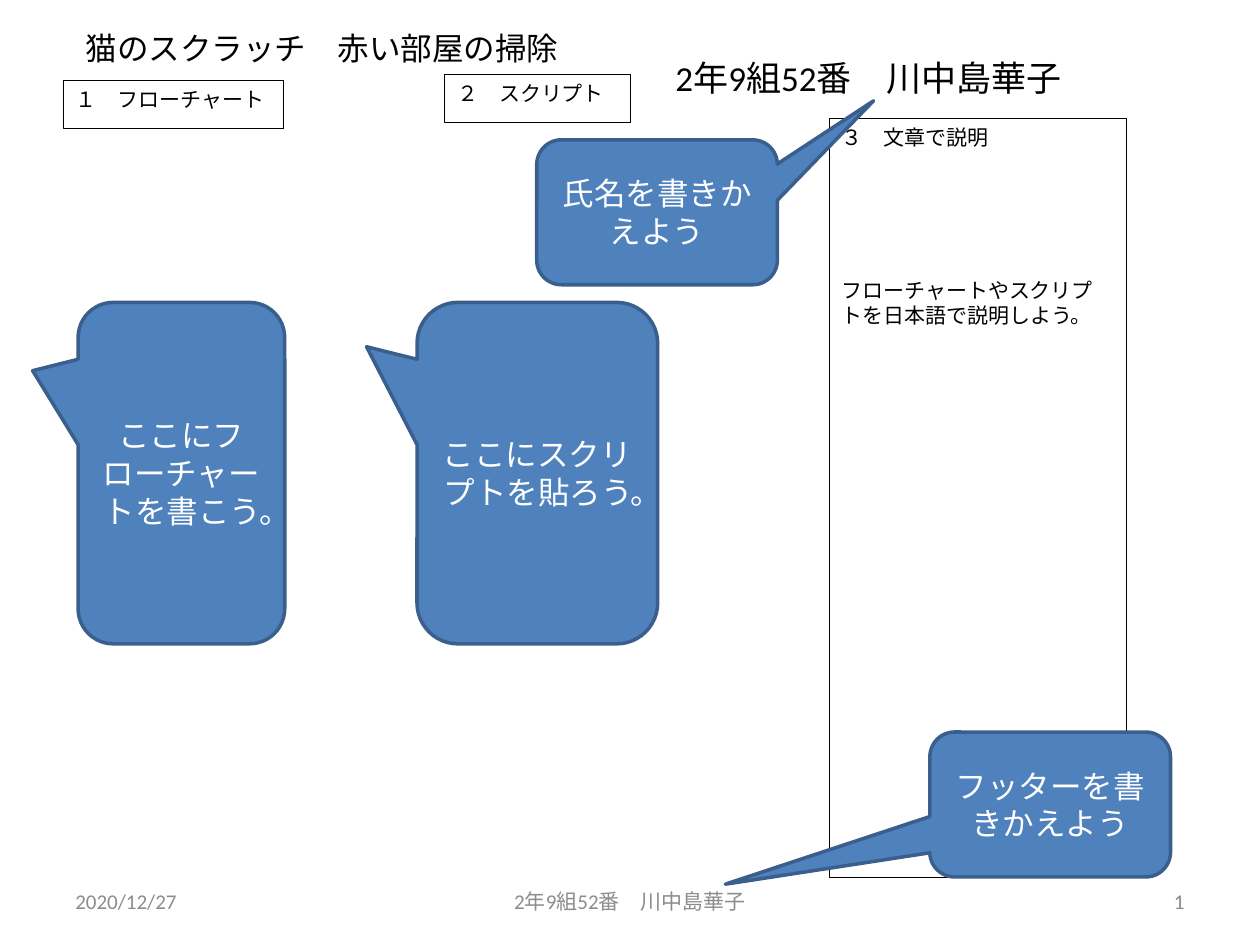
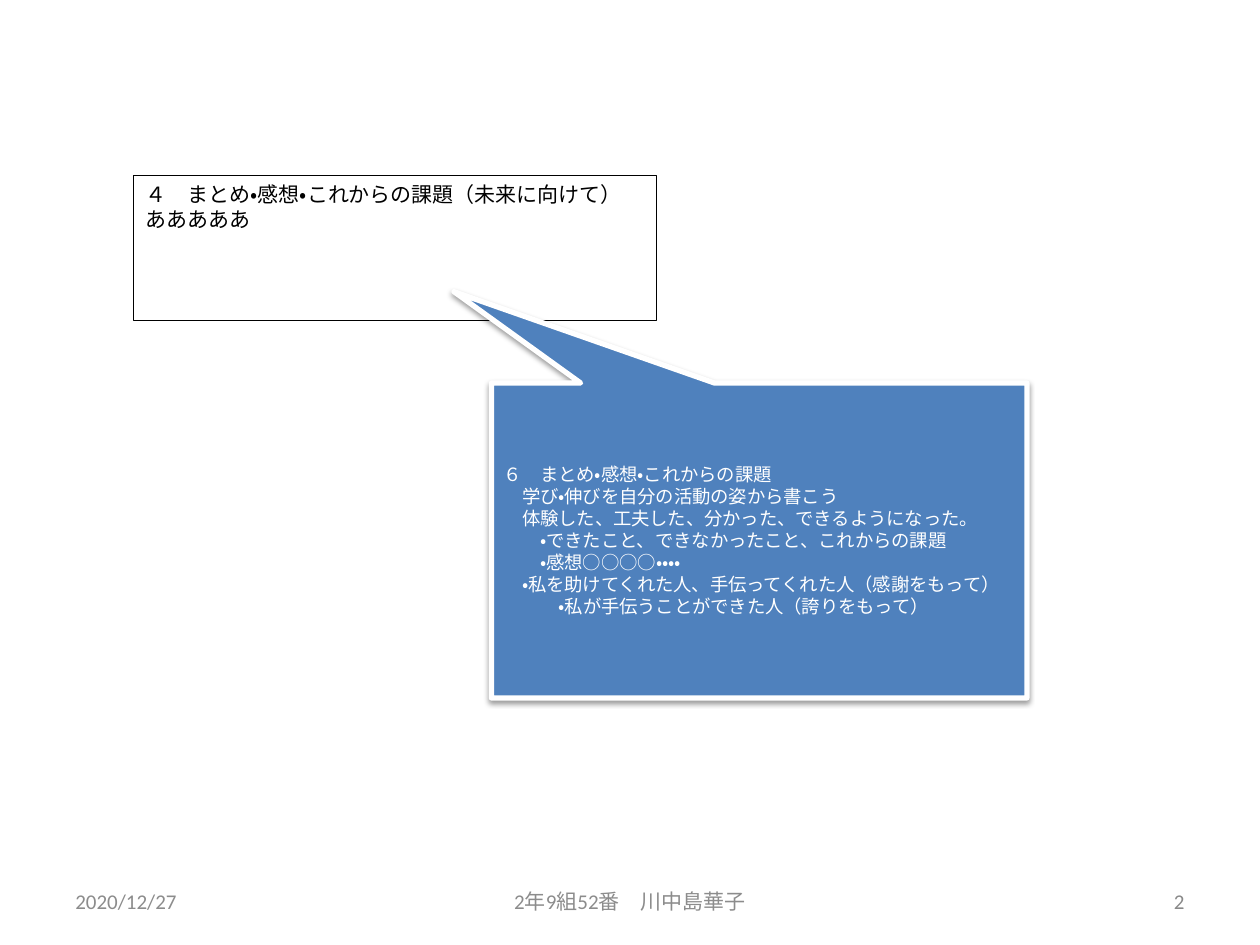
from lxml.etree import SubElement
from pptx import Presentation
from pptx.dml.color import RGBColor
from pptx.enum.lang import MSO_LANGUAGE_ID as LANG
from pptx.enum.shapes import MSO_SHAPE as SHAPE
from pptx.enum.text import MSO_ANCHOR as ANCHOR, PP_ALIGN as ALIGN
from pptx.oxml.ns import qn
from pptx.util import Inches, Pt

COLORS = {"ink": "000000", "paper": "FFFFFF", "blue": "4F81BD", "edge": "3A5F8C",
          "grey": "8C8C8C", "number": "898989"}
LATIN, JAPANESE = "Calibri", "Noto Sans CJK JP"
WIDTH, HEIGHT, MARGIN = 10, 7.5, 0.5

TITLE = "猫のスクラッチ　赤い部屋の掃除"
STUDENT = "2年9組52番　川中島華子"
DATE = "2020/12/27"
SECTIONS = [
    ((6.58, 0.94, 2.36, 6.02), ["３　文章で説明", "フローチャートやスクリプトを日本語で説明しよう。"], 73),
    ((3.53, 0.59, 1.47, 0.38), ["２　スクリプト"], 0),
    ((0.5, 0.64, 1.75, 0.38), ["１　フローチャート"], 0),
]
HINTS = [
    ((0.62, 2.4, 1.64, 2.71), (-0.72, -0.3), "ここにフローチャートを書こう。"),
    ((3.31, 2.4, 1.91, 2.71), (-0.71, -0.37), "ここにスクリプトを貼ろう。"),
    ((7.38, 5.81, 1.91, 1.15), (-1.35, 0.55), "フッターを書きかえよう"),
    ((4.26, 1.11, 1.91, 1.15), (0.9, -0.77), "氏名を書きかえよう"),
]
SUMMARY = ["４　まとめ・感想・これからの課題（未来に向けて）", "あああああ"]
INDENT = 0.145
ADVICE = [
    (0, "６　まとめ・感想・これからの課題"),
    (1, "学び・伸びを自分の活動の姿から書こう"),
    (1, "体験した、工夫した、分かった、できるようになった。"),
    (2, "・できたこと、できなかったこと、これからの課題"),
    (2, "・感想○○○○・・・・"),
    (1, "・私を助けてくれた人、手伝ってくれた人（感謝をもって）"),
    (3, "・私が手伝うことができた人（誇りをもって）"),
]


def rgb(name):
    return RGBColor.from_string(COLORS[name])


def write(s, lines, size, color, align=ALIGN.LEFT, anchor=ANCHOR.MIDDLE, font=LATIN, gap=0, levels=()):
    tf = s.text_frame
    tf.word_wrap, tf.vertical_anchor = True, anchor
    for i, line in enumerate(lines):
        p = tf.add_paragraph() if i else tf.paragraphs[0]
        p.text, p.alignment = line, align
        p.font.size, p.font.name, p.font.color.rgb = Pt(size), font, rgb(color)
        p.font.language_id = LANG.JAPANESE
        if i and gap:
            p.space_before = Pt(gap)
        if levels and levels[i]:
            p._p.get_or_add_pPr().set("marL", str(Inches(levels[i] * INDENT)))


def add_text(slide, box, text, size, color, align, font=LATIN):
    write(slide.shapes.add_textbox(*map(Inches, box)), [text], size, color, align, font=font)


def add_box(slide, kind, box, fill, line, weight, adjustments=()):
    s = slide.shapes.add_shape(kind, *map(Inches, box))
    s.shadow.inherit = False
    s.fill.solid()
    s.fill.fore_color.rgb = rgb(fill)
    s.line.color.rgb, s.line.width = rgb(line), Pt(weight)
    for i, value in enumerate(adjustments):
        s.adjustments[i] = value
    return s


def add_section(slide, box, lines, gap=0):
    s = add_box(slide, SHAPE.RECTANGLE, box, "paper", "ink", 0.25)
    write(s, lines, 12, "ink", anchor=ANCHOR.TOP, gap=gap)


def add_footer(slide, number):
    top, height, side, middle = 6.95, 0.4, 2.33, 3.17
    add_text(slide, (MARGIN, top, side, height), DATE, 12, "grey", ALIGN.LEFT)
    add_text(slide, ((WIDTH - middle) / 2, top, middle, height), STUDENT, 12, "grey", ALIGN.CENTER)
    add_text(slide, (WIDTH - MARGIN - side, top, side, height), str(number), 12, "number", ALIGN.RIGHT)


def add_shadow(s):
    effects = s._element.spPr.find(qn("a:effectLst"))
    shadow = SubElement(effects, qn("a:outerShdw"), blurRad=str(Pt(3.1)), dist=str(Pt(1.6)),
                        dir="5400000", rotWithShape="0")
    color = SubElement(shadow, qn("a:srgbClr"), val=COLORS["ink"])
    SubElement(color, qn("a:alpha"), val="38000")


def build_worksheet(slide):
    add_text(slide, (MARGIN, 0.19, 4.11, 0.38), TITLE, 18, "ink", ALIGN.CENTER, JAPANESE)
    add_text(slide, (4.84, 0.31, 4.11, 0.61), STUDENT, 20, "ink", ALIGN.CENTER)
    for box, lines, gap in SECTIONS:
        add_section(slide, box, lines, gap)
    for box, tip, text in HINTS:
        s = add_box(slide, SHAPE.ROUNDED_RECTANGULAR_CALLOUT, box, "blue", "edge", 2, (*tip, 0.17))
        write(s, [text], 18, "paper", ALIGN.CENTER)


def build_summary(slide):
    add_section(slide, (1.06, 1.39, 4.15, 1.15), SUMMARY)
    s = add_box(slide, SHAPE.RECTANGULAR_CALLOUT, (3.9, 3.04, 4.25, 2.5), "blue", "paper", 3, (-0.57, -0.79))
    add_shadow(s)
    levels, lines = zip(*ADVICE)
    write(s, lines, 10.5, "paper", levels=levels)


def main():
    prs = Presentation()
    prs.slide_width, prs.slide_height = Inches(WIDTH), Inches(HEIGHT)
    for number, build in enumerate((build_worksheet, build_summary), 1):
        slide = prs.slides.add_slide(prs.slide_layouts[6])
        add_footer(slide, number)
        build(slide)
    prs.save("out.pptx")


if __name__ == "__main__":
    main()
